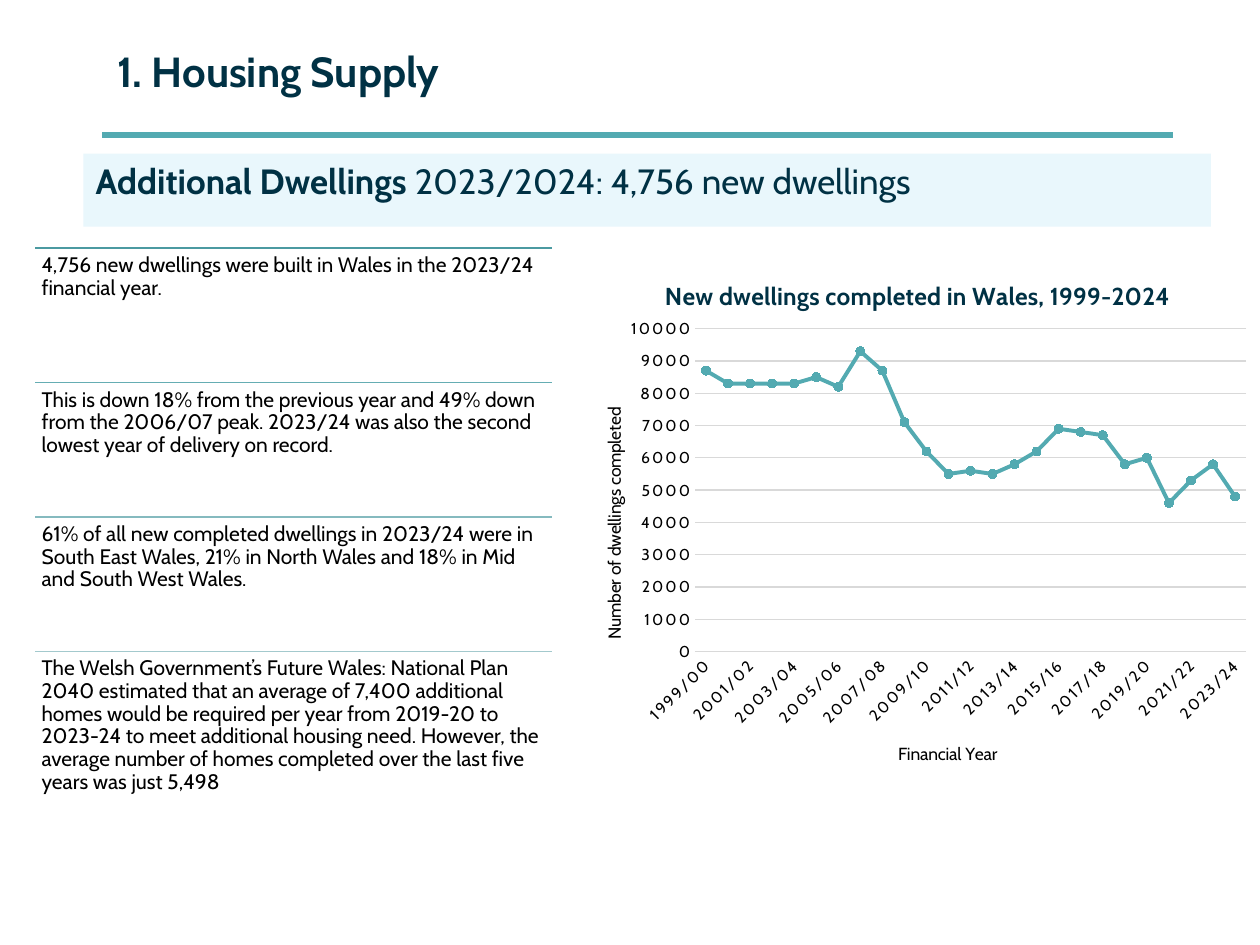
from lxml import etree
from pptx import Presentation
from pptx.chart.data import CategoryChartData
from pptx.dml.color import RGBColor
from pptx.enum.chart import XL_CHART_TYPE, XL_MARKER_STYLE, XL_TICK_MARK
from pptx.enum.shapes import MSO_CONNECTOR, MSO_SHAPE
from pptx.enum.text import MSO_ANCHOR, PP_ALIGN
from pptx.oxml import parse_xml
from pptx.oxml.ns import nsdecls, qn
from pptx.util import Cm, Pt

FONT, NAVY, TEAL, GREY, BLACK = "Cabin", "003144", "53AAB1", "D9D9D9", "000000"


def style(font, size, color, bold=False):
    font.name, font.size, font.bold = FONT, Pt(size), bold
    font.color.rgb = RGBColor.from_string(color)


def rule(left, top, width, color, weight):
    line = s.shapes.add_connector(MSO_CONNECTOR.STRAIGHT, Cm(left), Cm(top), Cm(left + width), Cm(top))
    line.line.color.rgb = RGBColor.from_string(color)
    line.line.width = Pt(weight)
    etree.SubElement(line._element.spPr, qn("a:effectLst"))


prs = Presentation()
prs.slide_width, prs.slide_height = Cm(25.4), Cm(19.05)
s = prs.slides.add_slide(prs.slide_layouts[5])

# Title and the rule under it
title = s.shapes.title
title.left, title.top, title.width, title.height = Cm(2.11), Cm(0.18), Cm(21.59), Cm(2.49)
tf = title.text_frame
tf.text = "1. Housing Supply"
tf.vertical_anchor = MSO_ANCHOR.MIDDLE
p = tf.paragraphs[0]
p.alignment = PP_ALIGN.LEFT
style(p.font, 24, NAVY, True)
rule(2.06, 2.72, 21.59, TEAL, 3.5)

# Headline band
band = s.shapes.add_shape(MSO_SHAPE.RECTANGLE, Cm(1.68), Cm(3.1), Cm(22.73), Cm(1.47))
band.shadow.inherit = False
band.fill.solid()
band.fill.fore_color.rgb = RGBColor.from_string("E9F7FC")
band.line.fill.background()
tf = band.text_frame
tf.vertical_anchor = MSO_ANCHOR.TOP
p = tf.paragraphs[0]
p.alignment = PP_ALIGN.LEFT
for text, bold in [("Additional Dwellings ", True), ("2023/2024: 4,756 new dwellings", False)]:
    r = p.add_run()
    r.text = text
    style(r.font, 20, NAVY, bold)

# Key points, each under a thin rule
points = [
    ("4B9AA1", "4,756 new dwellings were built in Wales in the 2023/24 financial year."),
    ("65ADB3", "This is down 18% from the previous year and 49% down from the 2006/07 peak. "
               "2023/24 was also the second lowest year of delivery on record."),
    ("85BABF", "61% of all new completed dwellings in 2023/24 were in South East Wales, "
               "21% in North Wales and 18% in Mid and South West Wales."),
    ("A3C9CD", "The Welsh Government’s Future Wales: National Plan 2040 estimated that an average of "
               "7,400 additional homes would be required per year from 2019-20 to 2023-24 to meet "
               "additional housing need. However, the average number of homes completed over the "
               "last five years was just 5,498"),
]
left, top, width, pitch = 0.71, 5.0, 10.41, 2.71
for i, (color, text) in enumerate(points):
    y = top + i * pitch
    rule(left, y, width, color, 0.85)
    tf = s.shapes.add_textbox(Cm(left), Cm(y), Cm(width), Cm(pitch)).text_frame
    tf.word_wrap = True
    tf.margin_left = tf.margin_right = tf.margin_top = tf.margin_bottom = Cm(0.13)
    tf.text = text
    p = tf.paragraphs[0]
    p.line_spacing = 0.9
    style(p.font, 12, BLACK)

# Line chart of completions
data = CategoryChartData()
data.categories = [f"{y}/{(y + 1) % 100:02d}" for y in range(1999, 2024)]
data.add_series("Series 1", [
    8700, 8300, 8300, 8300, 8300, 8500, 8200, 9300, 8700, 7100, 6200, 5500, 5600,
    5500, 5800, 6200, 6900, 6800, 6700, 5800, 6000, 4600, 5300, 5800, 4800])
chart = s.shapes.add_chart(XL_CHART_TYPE.LINE_MARKERS, Cm(11.51), Cm(5), Cm(13.89), Cm(10.85), data).chart
chart.has_legend = False
style(chart.font, 10, BLACK)
series = chart.plots[0].series[0]
chart.plots[0].vary_by_categories = False
series.smooth = False
series.format.line.color.rgb = RGBColor.from_string(TEAL)
series.format.line.width = Pt(2.25)
marker = series.marker
marker.style, marker.size = XL_MARKER_STYLE.CIRCLE, 5
marker.format.fill.solid()
marker.format.fill.fore_color.rgb = RGBColor.from_string(TEAL)
marker.format.line.color.rgb = RGBColor.from_string(TEAL)

# Axes
cat, val = chart.category_axis, chart.value_axis
for axis in (cat, val):
    axis.major_tick_mark = axis.minor_tick_mark = XL_TICK_MARK.NONE
    style(axis.tick_labels.font, 9, BLACK)
    axis.tick_labels.font._element.set("spc", "120")
cat._element.find(qn("c:txPr")).find(qn("a:bodyPr")).set("rot", "-2700000")
cat.format.line.color.rgb = RGBColor.from_string(GREY)
cat.format.line.width = Pt(0.75)
val.minimum_scale, val.maximum_scale, val.major_unit = 0, 10000, 1000
val.format.line.fill.background()
val.major_gridlines.format.line.color.rgb = RGBColor.from_string(GREY)
val.major_gridlines.format.line.width = Pt(0.75)

# Chart and axis titles, then the positions of titles and plot area
LAYOUT = "<c:layout %s><c:manualLayout>%s</c:manualLayout></c:layout>"
for owner, text, size, color, bold, x, y in [
    (chart, "New dwellings completed in Wales, 1999-2024", 14, NAVY, True, 0.13, 0.05),
    (cat, "Financial Year", 10, BLACK, False, 0.47, 0.91),
    (val, "Number of dwellings completed", 10, BLACK, False, 0.04, 0.29),
]:
    heading = owner.chart_title if owner is chart else owner.axis_title
    heading.text_frame.text = text
    style(heading.text_frame.paragraphs[0].font, size, color, bold)
    element = heading._element
    for old in element.findall(qn("c:layout")):
        element.remove(old)
    place = f'<c:xMode val="edge"/><c:yMode val="edge"/><c:x val="{x}"/><c:y val="{y}"/>'
    element.find(qn("c:tx")).addnext(parse_xml(LAYOUT % (nsdecls("c"), place)))
val.axis_title.text_frame._txBody.find(qn("a:bodyPr")).set("rot", "-5400000")

plot_area = chart._chartSpace.chart.plotArea
for old in plot_area.findall(qn("c:layout")):
    plot_area.remove(old)
place = ('<c:layoutTarget val="inner"/><c:xMode val="edge"/><c:yMode val="edge"/>'
         '<c:x val="0.18"/><c:y val="0.15"/><c:w val="0.8"/><c:h val="0.6"/>')
plot_area.insert(0, parse_xml(LAYOUT % (nsdecls("c"), place)))

prs.save("out.pptx")
